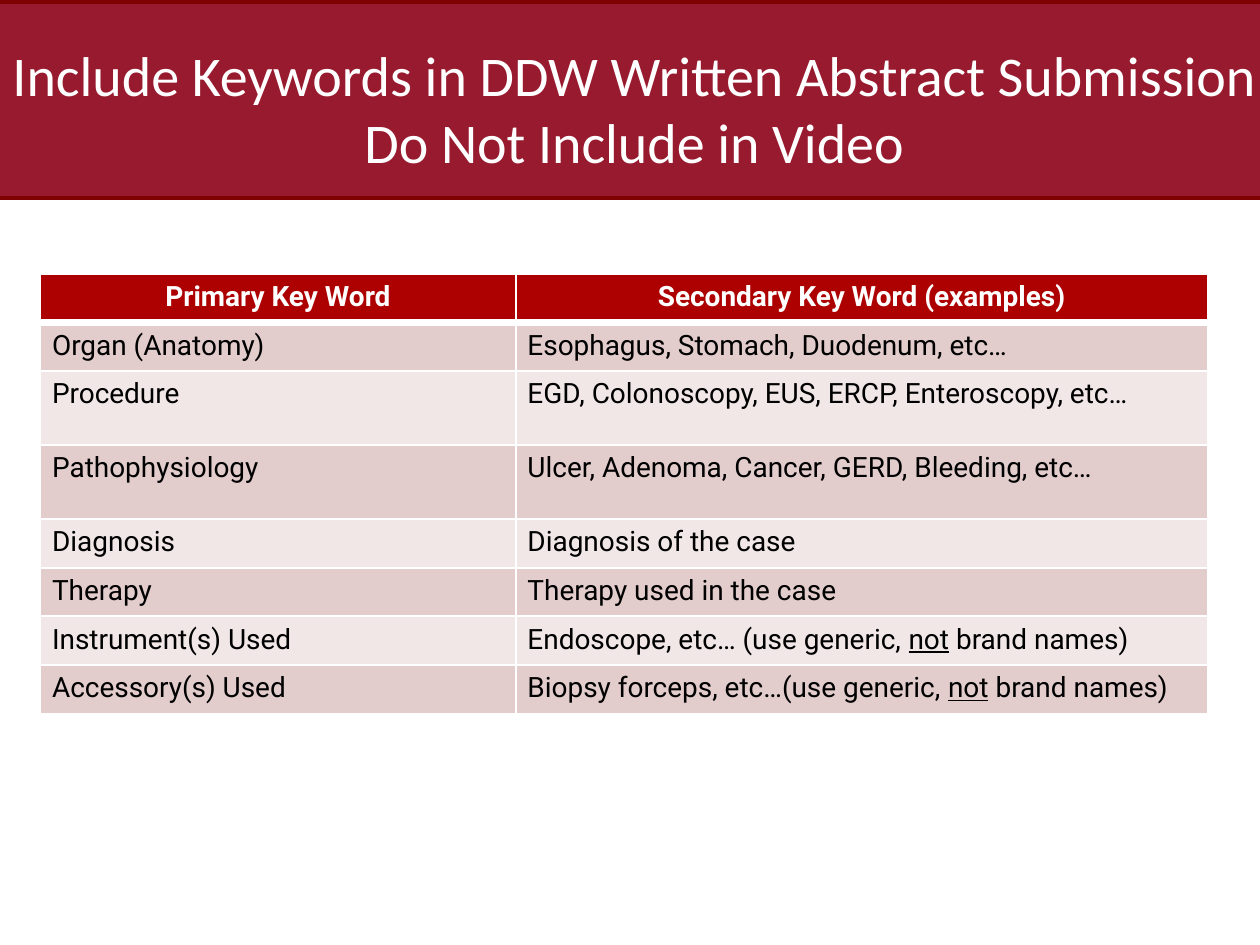
from lxml.etree import SubElement
from pptx import Presentation
from pptx.dml.color import RGBColor
from pptx.enum.shapes import MSO_SHAPE as Shape
from pptx.enum.text import MSO_ANCHOR as Anchor, PP_ALIGN as Align
from pptx.oxml.ns import qn
from pptx.util import Inches, Pt

SLIDE_WIDTH = 7.5
SLIDE_HEIGHT = SLIDE_WIDTH * 3 / 4

TITLE_LINES = ["Include Keywords in DDW Written Abstract Submission",
               "Do Not Include in Video"]

# Each cell is a list of runs; every second run is underlined
KEYWORDS = [
    (["Primary Key Word"], ["Secondary Key Word (examples)"]),
    (["Organ (Anatomy)"], ["Esophagus, Stomach, Duodenum, etc…"]),
    (["Procedure"], ["EGD, Colonoscopy, EUS, ERCP, Enteroscopy, etc…"]),
    (["Pathophysiology"], ["Ulcer, Adenoma, Cancer, GERD, Bleeding, etc…"]),
    (["Diagnosis"], ["Diagnosis of the case"]),
    (["Therapy"], ["Therapy used in the case"]),
    (["Instrument(s) Used"],
     ["Endoscope, etc… (use generic, ", "not", " brand names)"]),
    (["Accessory(s) Used"],
     ["Biopsy forceps, etc…(use generic, ", "not", " brand names)"]),
]
COLUMN_WIDTHS = [2.83, 4.12]
ROW_HEIGHT, TALL_HEIGHT = 0.29, 0.44
TALL_ROWS = (2, 3)


def color(code):
    return RGBColor.from_string(code)


class KeywordSlide:
    title_font, table_font = "Calibri", "Roboto"
    band_fill, band_line = "981A2F", "800101"
    header_fill, row_fills = "AD0101", ("F1E7E7", "E3CCCC")
    white, black = "FFFFFF", "000000"

    def __init__(self, deck):
        self.page = deck.slides.add_slide(deck.slide_layouts[5])

    def style(self, span, font, size, code, bold=False):
        span.font.name = font
        span.font.size = Pt(size)
        span.font.bold = bold
        span.font.color.rgb = color(code)

    def band(self, left, top, width, height):
        band = self.page.shapes.add_shape(
            Shape.RECTANGLE, Inches(left), Inches(top), Inches(width), Inches(height))
        band.shadow.inherit = False
        band.fill.solid()
        band.fill.fore_color.rgb = color(self.band_fill)
        band.line.color.rgb = color(self.band_line)
        band.line.width = Pt(2)
        # Keep the band behind the title
        self.page.shapes.title.element.addprevious(band.element)

    def title(self, lines, left, top, width, height):
        box = self.page.shapes.title
        box.left, box.top = Inches(left), Inches(top)
        box.width, box.height = Inches(width), Inches(height)
        frame = box.text_frame
        frame.word_wrap = True
        frame.vertical_anchor = Anchor.MIDDLE
        frame.margin_left = frame.margin_right = 0
        para = frame.paragraphs[0]
        para.alignment = Align.CENTER
        for index, line in enumerate(lines):
            if index:
                para.add_line_break()
            span = para.add_run()
            span.text = line
            self.style(span, self.title_font, 24, self.white)

    def borders(self, cell, top, bottom):
        props = cell._tc.get_or_add_tcPr()
        for side, width in (("L", 1), ("R", 1), ("T", top), ("B", bottom)):
            line = SubElement(props, qn(f"a:ln{side}"), w=str(Pt(width)))
            fill = SubElement(line, qn("a:solidFill"))
            SubElement(fill, qn("a:srgbClr"), val=self.white)

    def cell(self, cell, texts, row):
        header = row == 0
        self.borders(cell, top=3 if row == 1 else 1, bottom=3 if header else 1)
        cell.fill.solid()
        cell.fill.fore_color.rgb = color(
            self.header_fill if header else self.row_fills[row % 2])
        cell.margin_left = cell.margin_right = Inches(0.07)
        cell.margin_top = cell.margin_bottom = Inches(0.04)
        para = cell.text_frame.paragraphs[0]
        para.alignment = Align.CENTER if header else Align.LEFT
        for index, text in enumerate(texts):
            span = para.add_run()
            span.text = text
            self.style(span, self.table_font, 12,
                       self.white if header else self.black, header)
            if index % 2:
                span.font.underline = True

    def table(self, rows, left, top):
        heights = [TALL_HEIGHT if row in TALL_ROWS else ROW_HEIGHT
                   for row in range(len(rows))]
        table = self.page.shapes.add_table(
            len(rows), len(COLUMN_WIDTHS), Inches(left), Inches(top),
            Inches(sum(COLUMN_WIDTHS)), Inches(sum(heights))).table
        table.horz_banding = False
        for column, width in zip(table.columns, COLUMN_WIDTHS):
            column.width = Inches(width)
        for row, (texts, height) in enumerate(zip(rows, heights)):
            table.rows[row].height = Inches(height)
            for column, runs in enumerate(texts):
                self.cell(table.cell(row, column), runs, row)


def main():
    deck = Presentation()
    deck.slide_width, deck.slide_height = Inches(SLIDE_WIDTH), Inches(SLIDE_HEIGHT)
    slide = KeywordSlide(deck)

    # Title on its band
    slide.band(-1.24, 0.01, 9.98, 1.17)
    slide.title(TITLE_LINES, -0.07, 0.29, 7.69, 0.7)

    # Keyword table
    slide.table(KEYWORDS, 0.24, 1.63)

    deck.save("out.pptx")


if __name__ == "__main__":
    main()
